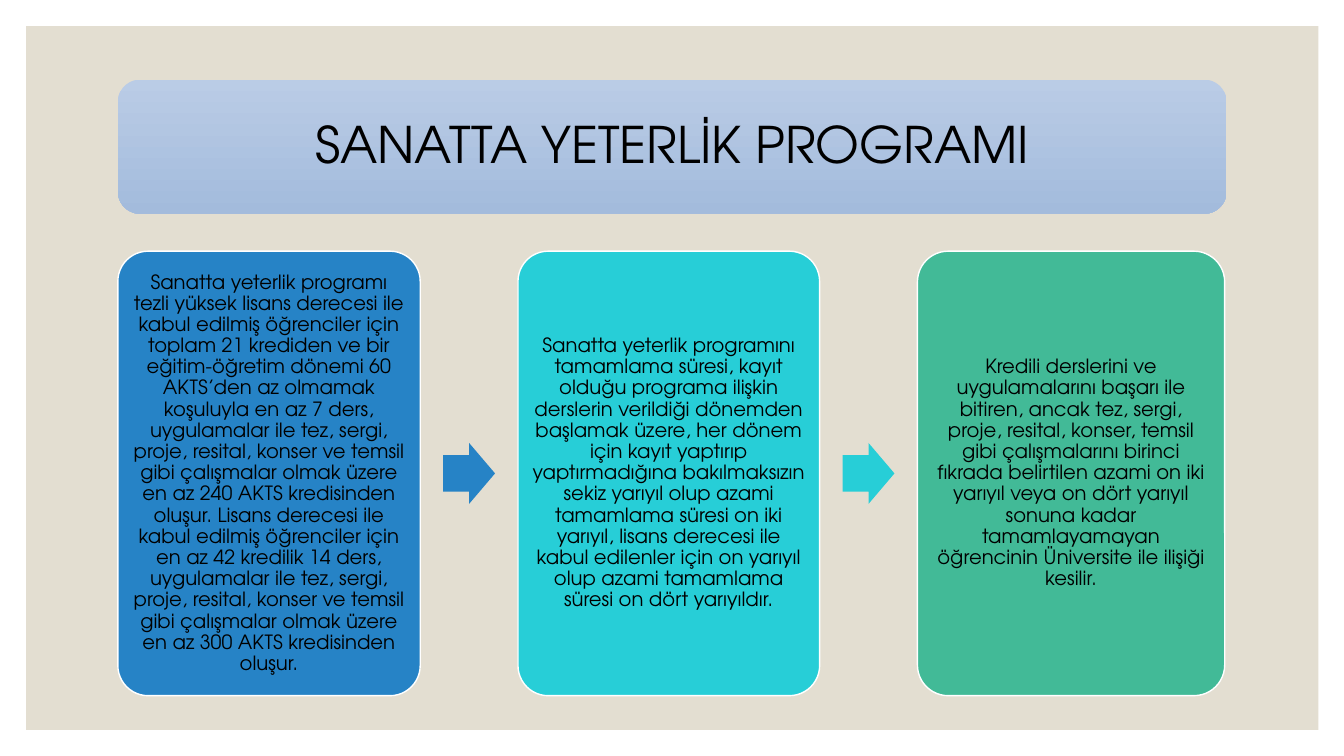
from dataclasses import dataclass

from pptx import Presentation
from pptx.dml.color import RGBColor
from pptx.enum.shapes import MSO_SHAPE as Shape
from pptx.enum.text import MSO_ANCHOR as Anchor, PP_ALIGN as Align
from pptx.util import Pt


@dataclass(frozen=True)
class Theme:
    font: str = "TeX Gyre Adventor"
    title_size: float = 36
    body_size: float = 14
    text: str = "000000"
    outline: str = "FFFFFF"
    backdrop: str = "E3DED1"
    banner: tuple = ("BACCE6", "A3BBDC")
    cards: tuple = ("2683C6", "27CED7", "42BA97")


THEME = Theme()
TITLE = "SANATTA YETERLİK PROGRAMI"
CARD_WIDTHS = (216, 215.5, 219.5)
CARD_TEXTS = (
    "Sanatta yeterlik programı tezli yüksek lisans derecesi ile kabul edilmiş "
    "öğrenciler için toplam 21 krediden ve bir eğitim-öğretim dönemi 60 AKTS’den "
    "az olmamak koşuluyla en az 7 ders, uygulamalar ile tez, sergi, proje, resital, "
    "konser ve temsil gibi çalışmalar olmak üzere en az 240 AKTS kredisinden oluşur. "
    "Lisans derecesi ile kabul edilmiş öğrenciler için en az 42 kredilik 14 ders, "
    "uygulamalar ile tez, sergi, proje, resital, konser ve temsil gibi çalışmalar "
    "olmak üzere en az 300 AKTS kredisinden oluşur.",
    "Sanatta yeterlik programını tamamlama süresi, kayıt olduğu programa ilişkin "
    "derslerin verildiği dönemden başlamak üzere, her dönem için kayıt yaptırıp "
    "yaptırmadığına bakılmaksızın sekiz yarıyıl olup azami tamamlama süresi on iki "
    "yarıyıl, lisans derecesi ile kabul edilenler için on yarıyıl olup azami "
    "tamamlama süresi on dört yarıyıldır.",
    "Kredili derslerini ve uygulamalarını başarı ile bitiren, ancak tez, sergi, "
    "proje, resital, konser, temsil gibi çalışmalarını birinci fıkrada belirtilen "
    "azami on iki yarıyıl veya on dört yarıyıl sonuna kadar tamamlayamayan "
    "öğrencinin Üniversite ile ilişiği kesilir.",
)


def write_text(shape, text, *, size, inset, color=THEME.text):
    frame = shape.text_frame
    frame.word_wrap = True
    frame.vertical_anchor = Anchor.MIDDLE
    frame.margin_left = frame.margin_right = Pt(inset)
    frame.margin_top = frame.margin_bottom = Pt(inset)
    paragraph = frame.paragraphs[0]
    paragraph.alignment = Align.CENTER
    paragraph.line_spacing = 0.9
    paragraph.space_before = Pt(0)
    run = paragraph.add_run()
    run.text = text
    run.font.name = THEME.font
    run.font.size = Pt(size)
    run.font.color.rgb = RGBColor.from_string(color)


def add_block(slide, kind, box, fill, line=None, adjustments=()):
    shape = slide.shapes.add_shape(kind, *map(Pt, box))
    shape.shadow.inherit = False
    for index, value in enumerate(adjustments):
        shape.adjustments[index] = value
    if isinstance(fill, tuple):
        shape.fill.gradient()
        shape.fill.gradient_angle = 270
        for stop, color in zip(shape.fill.gradient_stops, fill):
            stop.color.rgb = RGBColor.from_string(color)
    else:
        shape.fill.solid()
        shape.fill.fore_color.rgb = RGBColor.from_string(fill)
    if line:
        shape.line.color.rgb = RGBColor.from_string(line)
        shape.line.width = Pt(1)
    else:
        shape.line.fill.background()
    return shape


def add_banner(slide, box):
    add_block(slide, Shape.ROUNDED_RECTANGLE, box, THEME.banner)
    left, top, width, height = box
    pad = 4.5
    title = slide.shapes.title
    title.left, title.top = Pt(left + pad), Pt(top + pad)
    title.width, title.height = Pt(width - 2 * pad), Pt(height - 2 * pad)
    write_text(title, TITLE, size=THEME.title_size, inset=10.8)
    # Bring the title in front of its banner
    title.element.getparent().append(title.element)


def add_process(slide, box):
    left, top, width, height = box
    arrow_width, arrow_height = 37, 43.5
    gap = (width - sum(CARD_WIDTHS)) / (len(CARD_WIDTHS) - 1)
    steps = zip(CARD_TEXTS, CARD_WIDTHS, THEME.cards)
    for index, (text, card_width, color) in enumerate(steps):
        card = add_block(slide, Shape.ROUNDED_RECTANGLE,
                         (left, top, card_width, height), color,
                         line=THEME.outline, adjustments=(0.1,))
        write_text(card, text, size=THEME.body_size, inset=4.2)
        left += card_width
        if index < len(CARD_TEXTS) - 1:
            arrow_box = (left + (gap - arrow_width) / 2,
                         top + (height - arrow_height) / 2,
                         arrow_width, arrow_height)
            add_block(slide, Shape.RIGHT_ARROW, arrow_box, color,
                      adjustments=(0.6, 0.5))
        left += gap


def main():
    presentation = Presentation()
    presentation.slide_width, presentation.slide_height = Pt(960), Pt(540)
    slide = presentation.slides.add_slide(presentation.slide_layouts[5])
    # Backdrop, title banner, three-step process
    add_block(slide, Shape.RECTANGLE, (18.7, 18.7, 923, 502.6), THEME.backdrop)
    add_banner(slide, (84.2, 56.9, 792, 95.8))
    add_process(slide, (84.2, 179.4, 790.6, 317.5))
    presentation.save("out.pptx")


if __name__ == "__main__":
    main()
